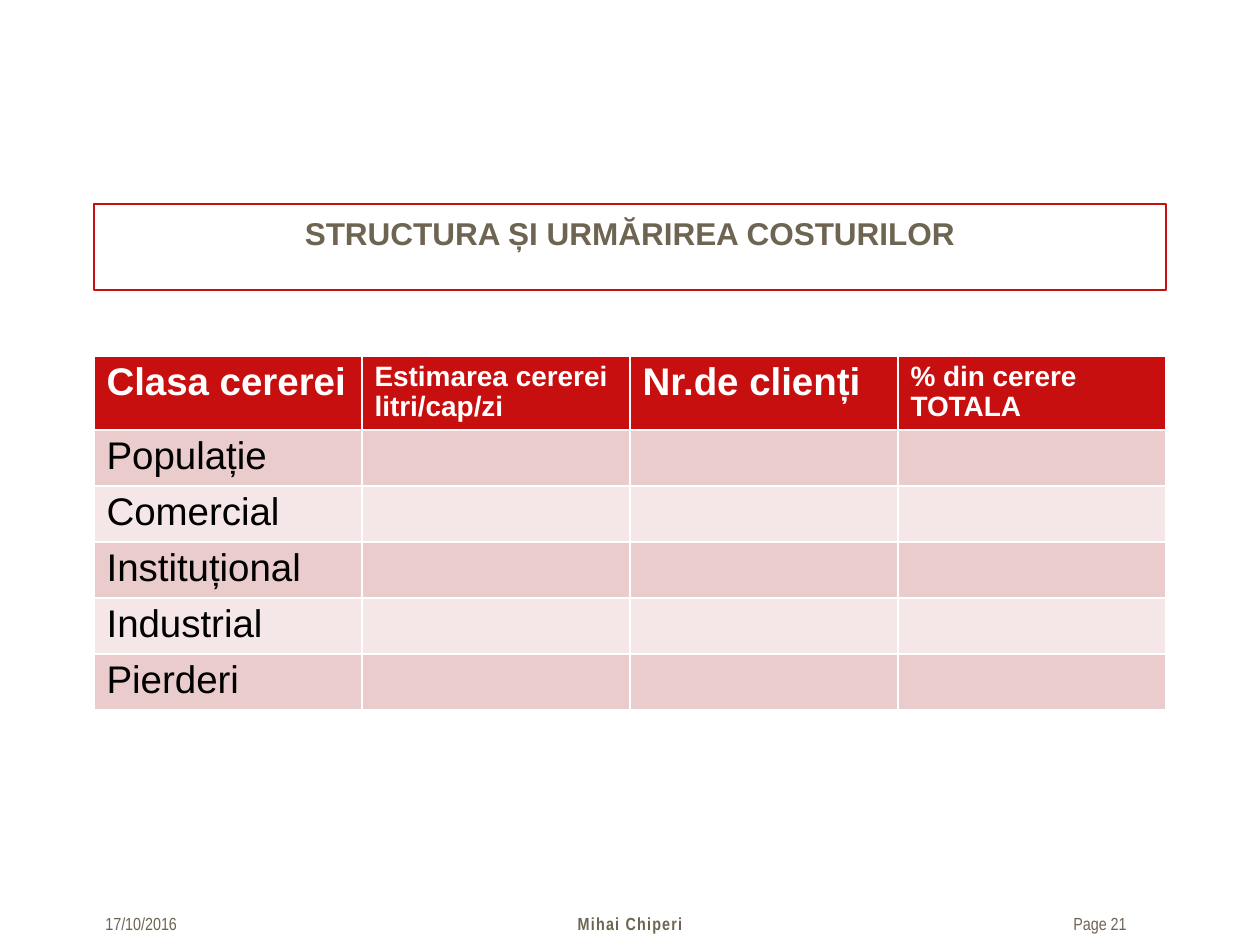
from pptx import Presentation
from pptx.dml.color import RGBColor as Rgb
from pptx.enum.text import PP_ALIGN as Align, MSO_ANCHOR as Anchor, MSO_AUTO_SIZE as Auto
from pptx.util import Pt

THEME = {
    "red": Rgb.from_string("C80F0F"),
    "taupe": Rgb.from_string("6E6452"),
    "white": Rgb.from_string("FFFFFF"),
    "black": Rgb.from_string("000000"),
    "bands": [Rgb.from_string("EBCCCC"), Rgb.from_string("F5E7E7")],
    "face": "Arial",
    "slim": "Arial Narrow",
    "title": Pt(18),
    "large": Pt(22),
    "small": Pt(16),
    "foot": Pt(10),
}


def px(*nums):
    return [n * 914400 // 126 for n in nums]


def write(frame, text, color, **form):
    para = frame.paragraphs[0]
    run = para.add_run()
    run.text = text
    run.font.color.rgb = THEME[color]
    for key, val in form.items():
        setattr(run.font, key, val)
    return para


deck = Presentation()
deck.slide_width, deck.slide_height = px(1260, 945)
slide = deck.slides.add_slide(deck.slide_layouts[5])

title = slide.shapes.title
title.left, title.top, title.width, title.height = px(94, 204, 1072, 86)
title.line.color.rgb = THEME["red"]
title.line.width = Pt(0.75)
frame = title.text_frame
look = {"auto_size": Auto.NONE, "vertical_anchor": Anchor.TOP, "margin_top": px(10)[0]}
for key, val in look.items():
    setattr(frame, key, val)
para = write(frame, "STRUCTURA ȘI URMĂRIREA COSTURILOR", "taupe",
             name=THEME["face"], size=THEME["title"], bold=True)
para.alignment = Align.CENTER

heads = [
    ("Clasa cererei", "large"),
    ("Estimarea cererei litri/cap/zi", "small"),
    ("Nr.de clienți", "large"),
    ("% din cerere TOTALA", "small"),
]
names = ["Populație", "Comercial", "Instituțional", "Industrial", "Pierderi"]

grid = slide.shapes.add_table(len(names) + 1, len(heads), *px(94, 356, 1072, 352)).table
for col in grid.columns:
    col.width = px(268)[0]
for num, row in enumerate(grid.rows):
    row.height = px(56 if num else 74)[0]
    for cell in row.cells:
        cell.fill.solid()
        cell.fill.fore_color.rgb = THEME["bands"][(num - 1) % 2] if num else THEME["red"]

for num, (text, size) in enumerate(heads):
    para = write(grid.cell(0, num).text_frame, text, "white",
                 name=THEME["face"], size=THEME[size], bold=True)
    para.line_spacing = 0.96
for num, text in enumerate(names, 1):
    para = write(grid.cell(num, 0).text_frame, text, "black",
                 name=THEME["face"], size=THEME["large"], bold=False)
    para.line_spacing = 0.96

notes = [
    ("17/10/2016", 93, 179, Align.LEFT, False, 0),
    ("Mihai Chiperi", 394, 472, Align.CENTER, True, 70),
    ("Page 21", 1061, 127, Align.LEFT, False, 0),
]
for text, left, width, align, bold, gap in notes:
    box = slide.shapes.add_textbox(*px(left, 907, width, 34))
    box.text_frame.word_wrap = True
    para = write(box.text_frame, text, "taupe",
                 name=THEME["slim"], size=THEME["foot"], bold=bold)
    para.alignment = align
    para.runs[0]._r.get_or_add_rPr().set("spc", str(gap))

deck.save("out.pptx")
